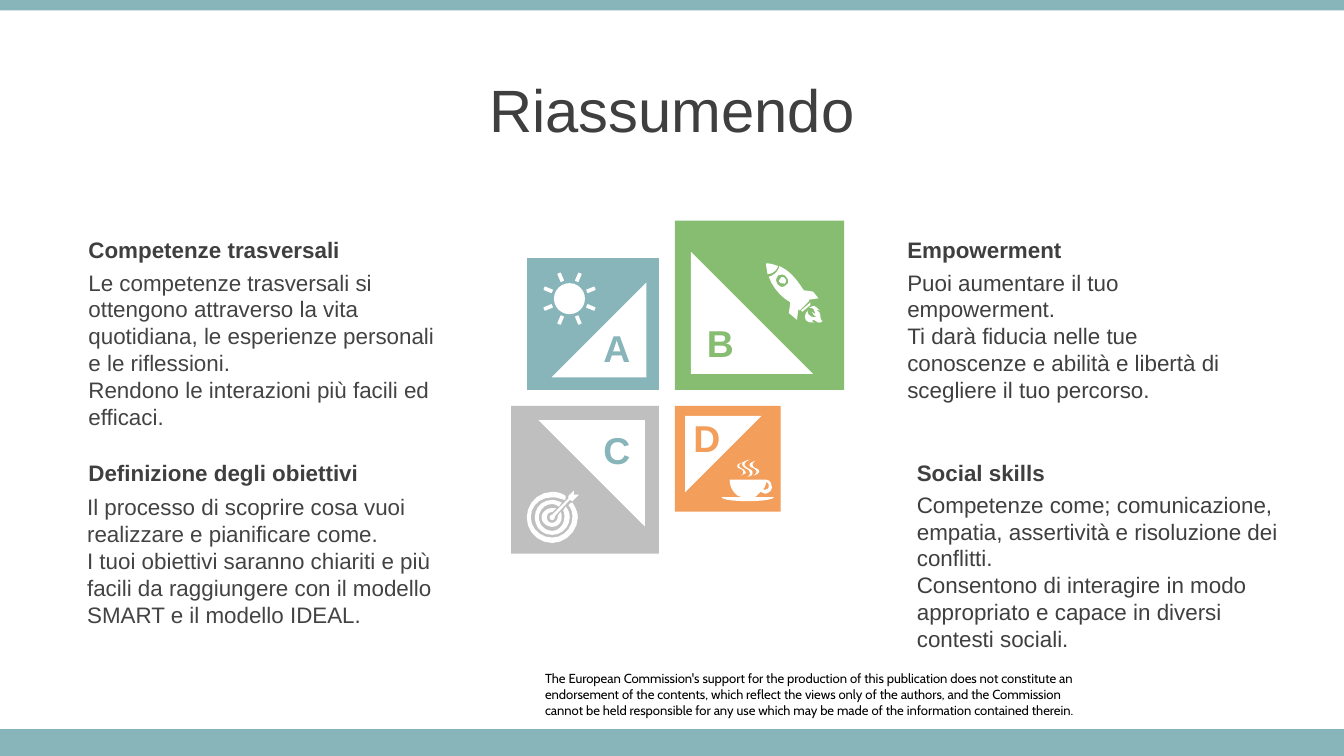
"""Build the summary slide with four topics around a lettered block of squares."""
from dataclasses import dataclass
from math import cos, radians, sin

from pptx import Presentation
from pptx.dml.color import RGBColor
from pptx.enum.shapes import MSO_SHAPE
from pptx.enum.text import MSO_ANCHOR, MSO_AUTO_SIZE, PP_ALIGN
from pptx.util import Pt

RECTANGLE, TRIANGLE = MSO_SHAPE.RECTANGLE, MSO_SHAPE.RIGHT_TRIANGLE
OVAL, ROUNDED = MSO_SHAPE.OVAL, MSO_SHAPE.ROUNDED_RECTANGLE
LEFT, CENTER = PP_ALIGN.LEFT, PP_ALIGN.CENTER
MIDDLE, NO_FIT = MSO_ANCHOR.MIDDLE, MSO_AUTO_SIZE.NONE


@dataclass(frozen=True)
class Theme:
    teal: str = "87B5BA"
    green: str = "86BD70"
    orange: str = "F39E5A"
    gray: str = "BFBFBF"
    white: str = "FFFFFF"
    black: str = "000000"
    dark: str = "3F3F3F"
    body: str = "434343"
    font: str = "Arial"
    note_font: str = "Cabin"
    title_size: int = 32
    letter_size: int = 20
    text_size: int = 12
    note_size: int = 7


theme = Theme()


def paint(shape, color):
    shape.shadow.inherit = False
    shape.fill.solid()
    shape.fill.fore_color.rgb = RGBColor.from_string(color)
    shape.line.fill.background()


def write(frame, lines, size, color, font=theme.font, bold=False, align=LEFT):
    frame.word_wrap = True
    frame.auto_size = NO_FIT
    for index, line in enumerate(lines):
        paragraph = frame.add_paragraph() if index else frame.paragraphs[0]
        paragraph.alignment = align
        run = paragraph.add_run()
        run.text = line
        run.font.name = font
        run.font.size = Pt(size)
        run.font.bold = bold
        run.font.color.rgb = RGBColor.from_string(color)


presentation = Presentation()
presentation.slide_width, presentation.slide_height = Pt(720), Pt(405)
slide = presentation.slides.add_slide(presentation.slide_layouts[5])
shapes = slide.shapes

for top, height in ((0, 5.6), (390.7, 14.3)):
    paint(shapes.add_shape(RECTANGLE, 0, Pt(top), Pt(720), Pt(height)), theme.teal)

title = shapes.title
title.left, title.top, title.width, title.height = 0, Pt(35.5), Pt(720), Pt(45)
title.text_frame.vertical_anchor = MIDDLE
write(title.text_frame, ["Riassumendo"], theme.title_size, theme.dark, align=CENTER)

note = shapes.add_textbox(Pt(292), Pt(359.3), Pt(300), Pt(25.2)).text_frame
note.margin_left = note.margin_right = note.margin_top = note.margin_bottom = 0
write(note, [
    "The European Commission's support for the production of this publication does not "
    "constitute an endorsement of the contents, which reflect the views only of the "
    "authors, and the Commission",
    "cannot be held responsible for any use which may be made of the information "
    "contained therein.",
], theme.note_size, theme.black, theme.note_font)

middle_x, middle_y, half_gap = 357.3, 213.2, 4.3
squares = [
    ("A", -1, -1, 70.6, 270, theme.teal, theme.teal, 314.6, 170.6),
    ("B", 1, -1, 90.7, 0, theme.green, theme.green, 370.1, 167.8),
    ("C", -1, 1, 79.2, 180, theme.gray, theme.teal, 314.6, 225.4),
    ("D", 1, 1, 56.7, 90, theme.orange, theme.orange, 362.9, 218.9),
]
for letter, side_x, side_y, size, turn, color, letter_color, left, top in squares:
    inset, leg = 0.095 * size, 0.72 * size
    for kind, gap, length, fill in ((RECTANGLE, half_gap, size, color),
                                    (TRIANGLE, half_gap + inset, leg, theme.white)):
        x = middle_x + side_x * (gap + length / 2) - length / 2
        y = middle_y + side_y * (gap + length / 2) - length / 2
        shape = shapes.add_shape(kind, Pt(x), Pt(y), Pt(length), Pt(length))
        paint(shape, fill)
        if kind == TRIANGLE:
            shape.rotation = turn
    label = shapes.add_textbox(Pt(left), Pt(top), Pt(31.7), Pt(31.7))
    write(label.text_frame, [letter], theme.letter_size, letter_color,
          bold=True, align=CENTER)

topics = [
    ("Competenze trasversali", 40.3, 123.1, 40.3, 140.4, 200, theme.body, [
        "Le competenze trasversali si ottengono attraverso la vita quotidiana, "
        "le esperienze personali e le riflessioni.",
        "Rendono le interazioni più facili ed efficaci."]),
    ("Definizione degli obiettivi", 40.3, 242.2, 39.6, 260.9, 200, theme.body, [
        "Il processo di scoprire cosa vuoi realizzare e pianificare come.",
        "I tuoi obiettivi saranno chiariti e più facili da raggiungere con il modello "
        "SMART e il modello IDEAL."]),
    ("Empowerment", 479, 123.1, 479, 140.4, 200, theme.dark, [
        "Puoi aumentare il tuo empowerment.",
        "Ti darà fiducia nelle tue conoscenze e abilità e libertà di scegliere il tuo "
        "percorso."]),
    ("Social skills", 484.1, 242.2, 484.1, 259.4, 219.6, theme.dark, [
        "Competenze come; comunicazione, empatia, assertività e risoluzione dei "
        "conflitti.",
        "Consentono di interagire in modo appropriato e capace in diversi contesti "
        "sociali."]),
]
for heading, left, top, body_left, body_top, width, color, lines in topics:
    box = shapes.add_textbox(Pt(body_left), Pt(body_top), Pt(width), Pt(94))
    write(box.text_frame, lines, theme.text_size, color)
    box = shapes.add_textbox(Pt(left), Pt(top), Pt(200), Pt(21.6))
    write(box.text_frame, [heading], theme.text_size, theme.dark, bold=True)

sun_x, sun_y, sun_radius = 305.1, 160, 8.3
paint(shapes.add_shape(OVAL, Pt(sun_x - sun_radius), Pt(sun_y - sun_radius),
                       Pt(2 * sun_radius), Pt(2 * sun_radius)), theme.white)
for step in range(8):
    angle = 22.5 + 45 * step
    x = sun_x + 12.4 * cos(radians(angle))
    y = sun_y + 12.4 * sin(radians(angle))
    ray = shapes.add_shape(ROUNDED, Pt(x - 2.4), Pt(y - 1), Pt(4.8), Pt(2))
    ray.rotation = angle
    paint(ray, theme.white)

rocket = [
    [(31, 35), (30, 37, 33, 41, 38, 40), (35, 39, 35, 37, 34, 36), (35, 36, 35, 38, 37, 37),
     (35, 36, 37, 33, 32, 33), (37, 30, 37, 33, 40, 35), (39, 35, 37, 34, 38, 35),
     (42, 37, 39, 41, 42, 43), (39, 46, 37, 42, 35, 42), (34, 43, 34, 43, 36, 44),
     (27, 45, 28, 38, 31, 35)],
    [(26, 35), (33, 29), (33, 31), (27, 36)],
    [(11, 11), (11, 10, 13, 10, 14, 11), (15, 12, 15, 14, 14, 15),
     (13, 15, 11, 15, 10, 14), (9, 13, 10, 12, 11, 11)],
    [(9, 9), (7, 11, 7, 14, 9, 16), (11, 18, 13, 18, 15, 16),
     (17, 15, 17, 12, 15, 10), (14, 8, 11, 8, 9, 9)],
    [(2, 10), (6, 9, 9, 6, 10, 2), (19, 6, 24, 14, 28, 20), (35, 21), (39, 26), (32, 27),
     (32, 28), (25, 35), (24, 34), (23, 42), (17, 37), (18, 29), (11, 25, 5, 18, 2, 10)],
    [(0, 0), (4, 0, 6, 1, 9, 2), (8, 5, 5, 8, 1, 8), (1, 6, 0, 3, 0, 0)],
]
cup = [
    [(33, 17), (33, 19, 32, 21, 31, 22), (32, 23, 33, 23, 33, 22), (35, 22, 35, 21, 35, 19),
     (35, 18, 34, 17, 33, 17)],
    [(33, 15), (35, 15, 37, 17, 37, 19), (38, 21, 37, 24, 34, 25), (33, 26, 31, 25, 29, 24),
     (28, 25, 27, 26, 26, 27), (26, 27, 25, 28, 24, 28), (39, 28), (38, 30, 30, 31, 19, 31),
     (9, 31, 0, 30, 0, 28), (15, 28), (14, 28, 13, 27, 12, 27), (8, 24, 6, 20, 6, 15)],
    [(16, 2), (14, 3, 13, 3, 13, 5), (14, 7, 18, 7, 18, 10), (17, 11, 16, 11, 14, 12),
     (16, 11, 16, 11, 16, 9), (16, 7, 13, 7, 12, 6), (11, 4, 12, 3, 16, 2)],
    [(25, 1), (24, 2, 23, 2, 23, 4), (23, 7, 28, 6, 28, 9), (27, 11, 26, 11, 24, 12),
     (25, 11, 26, 10, 26, 9), (26, 7, 22, 6, 21, 5), (20, 3, 22, 2, 25, 1)],
    [(21, 0), (19, 1, 17, 2, 17, 4), (18, 7, 24, 7, 23, 10), (23, 12, 22, 12, 19, 13),
     (21, 12, 21, 11, 21, 10), (21, 7, 17, 7, 16, 5), (14, 3, 16, 1, 21, 0)],
]
target = [
    [(19, 13), (22, 13), (19, 16), (16, 16, 15, 18, 15, 20), (15, 22, 16, 24, 19, 24),
     (21, 24, 23, 22, 23, 20), (23, 19), (25, 16), (26, 17, 26, 19, 26, 20),
     (26, 24, 23, 27, 19, 27), (15, 27, 11, 24, 11, 20), (11, 16, 15, 13, 19, 13)],
    [(19, 7), (21, 7, 24, 8, 26, 9), (24, 12), (22, 11, 21, 10, 19, 10),
     (13, 10, 9, 15, 9, 20), (9, 25, 13, 30, 19, 30), (24, 30, 28, 25, 28, 20),
     (28, 18, 28, 16, 27, 15), (29, 12), (31, 14, 32, 17, 32, 20),
     (32, 27, 26, 33, 19, 33), (11, 33, 6, 27, 6, 20), (6, 13, 11, 7, 19, 7)],
    [(19, 1), (23, 1, 26, 2, 29, 4), (29, 6), (28, 7), (25, 6, 22, 5, 19, 5),
     (10, 5, 3, 11, 3, 20), (3, 28, 10, 35, 19, 35), (27, 35, 34, 28, 34, 20),
     (34, 16, 33, 13, 31, 11), (33, 9), (34, 9), (36, 12, 38, 16, 38, 20),
     (38, 30, 29, 39, 19, 39), (8, 39, 0, 30, 0, 20), (0, 10, 8, 1, 19, 1)],
    [(35, 0), (35, 3), (39, 3), (34, 8), (32, 7), (21, 19), (21, 21, 20, 22, 19, 22),
     (18, 22, 17, 21, 17, 20), (17, 19, 18, 18, 19, 18), (31, 6), (31, 4)],
]
unit = 0.72
for left, top, outlines in ((410.4, 141.1, rocket), (386.6, 246.2, cup), (282.2, 262.8, target)):
    builder = None
    for outline in outlines:
        points = [outline[0]]
        for segment in outline[1:]:
            if len(segment) == 2:
                points.append(segment)
                continue
            corners = [points[-1], segment[:2], segment[2:4], segment[4:]]
            for t in (0.2, 0.4, 0.6, 0.8, 1):
                weights = ((1 - t) ** 3, 3 * t * (1 - t) ** 2, 3 * t * t * (1 - t), t ** 3)
                points.append(tuple(sum(w * corner[axis] for w, corner in zip(weights, corners))
                                    for axis in (0, 1)))
        points = [(Pt(left + unit * x), Pt(top + unit * y)) for x, y in points]
        if builder is None:
            builder = shapes.build_freeform(*points[0])
        else:
            builder.move_to(*points[0])
        builder.add_line_segments(points[1:], close=True)
    paint(builder.convert_to_shape(), theme.white)

presentation.save("out.pptx")
